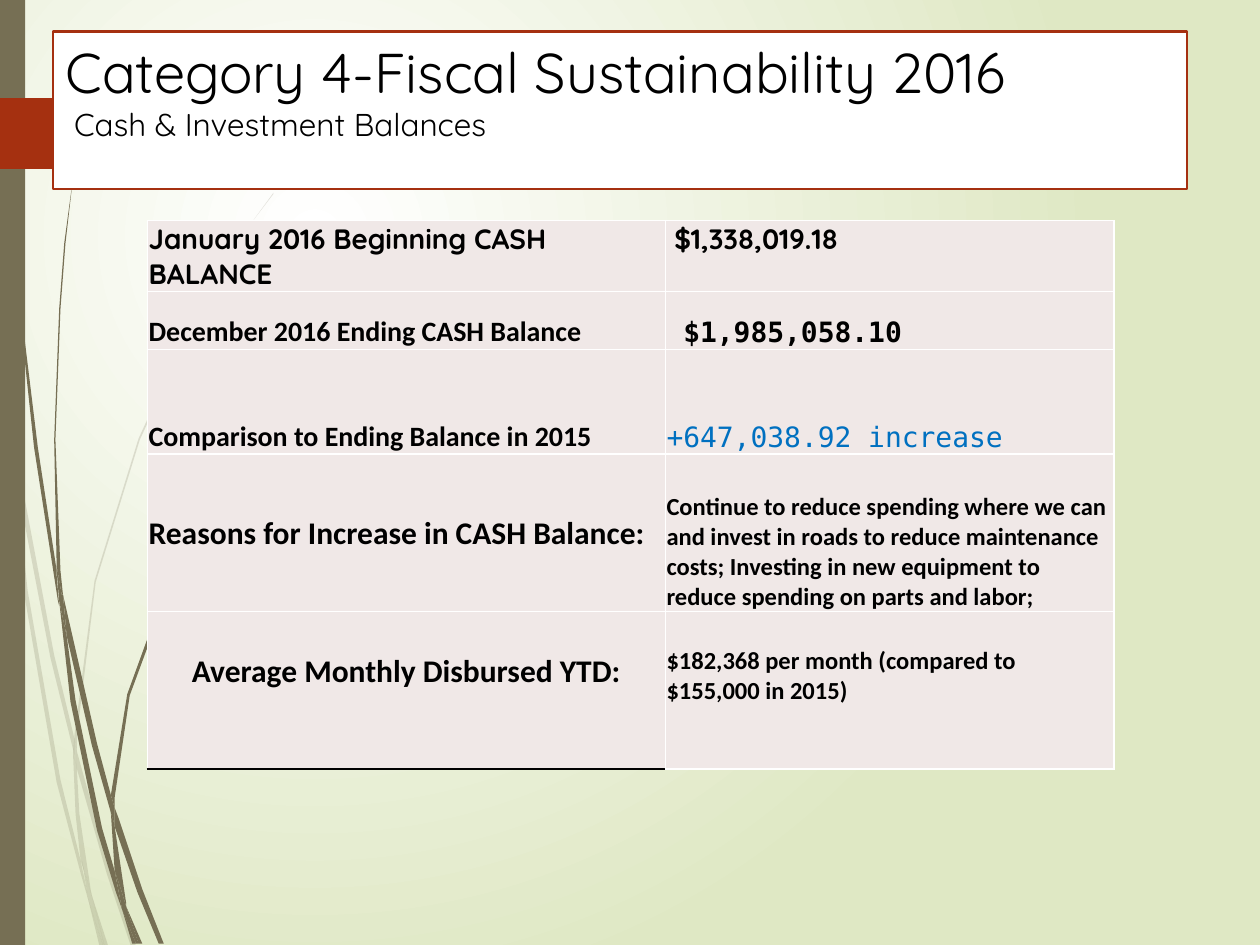
"""Build the fiscal sustainability slide with its cash balance table."""
import pptx
import pptx.dml.color
import pptx.enum.shapes
import pptx.enum.text
import pptx.oxml
import pptx.oxml.ns
import pptx.util

RGBColor = pptx.dml.color.RGBColor
SHAPE = pptx.enum.shapes.MSO_SHAPE
ANCHOR = pptx.enum.text.MSO_ANCHOR
ALIGN = pptx.enum.text.PP_ALIGN
EMU_PER_PX = 9144

OLIVE = RGBColor(0x76, 0x6F, 0x54)
RUST = RGBColor(0xA5, 0x30, 0x10)
WHITE = RGBColor(0xFF, 0xFF, 0xFF)
BLACK = RGBColor(0, 0, 0)
BLUE = RGBColor(0x00, 0x70, 0xC0)
SAGE = RGBColor(0xDF, 0xE8, 0xC4)
BLUSH = RGBColor(0xF0, 0xE8, 0xE7)

HEAD, BODY, MONO = "Quicksand", "Calibri", "DejaVu Sans Mono"

PALE_WISPS = [
    [(8, 350), (6, 322), (0, 282), (0, 299), (7, 344)],
    [(40, 522), (59, 599), (59, 586), (43, 520), (10, 345), (12, 376)],
    [(64, 607), (61, 596), (61, 610), (85, 694), (104, 751), (108, 751), (88, 692)],
    [(83, 751), (86, 751), (73, 711)],
    [(64, 683), (48, 619), (22, 469), (12, 376), (8, 350), (19, 470), (45, 621),
     (64, 693), (70, 714), (69, 707)],
    [(58, 599), (60, 646), (64, 683), (67, 692), (73, 711), (72, 706), (63, 646),
     (61, 610), (61, 608)],
    [(61, 584), (76, 462), (111, 349), (159, 245), (187, 198), (201, 175), (217, 154),
     (217, 153), (201, 175), (186, 197), (158, 244), (110, 348), (75, 461), (59, 584),
     (59, 586), (61, 596)],
    [(70, 714), (79, 751), (82, 751)],
    [(61, 608), (61, 610), (61, 596), (59, 586), (58, 599)],
    [(67, 692), (65, 683), (69, 707), (70, 714), (82, 751), (83, 751), (73, 711)],
]
DARK_WISPS = [
    [(5, 110), (14, 233), (27, 355), (46, 477), (47, 481), (45, 457), (45, 453),
     (30, 355), (15, 232), (6, 109), (4, 48), (3, 0), (2, 0), (3, 48)],
    [(73, 592), (88, 645), (88, 633), (88, 631), (77, 590), (50, 472), (53, 505)],
    [(94, 649), (91, 641), (91, 656), (109, 708), (126, 749), (130, 749), (113, 706)],
    [(91, 691), (81, 657), (60, 556), (53, 505), (47, 477), (56, 557), (77, 659),
     (92, 708), (97, 722), (96, 717)],
    [(50, 472), (48, 453), (44, 349), (48, 245), (52, 193), (58, 141), (51, 193),
     (47, 245), (43, 349), (45, 449), (49, 472)],
    [(110, 749), (113, 749), (100, 719)],
    [(47, 477), (53, 505), (50, 472), (49, 472), (45, 449), (45, 453)],
    [(91, 633), (103, 552), (131, 476), (169, 406), (191, 374), (203, 359), (216, 344),
     (215, 344), (203, 358), (191, 373), (168, 405), (129, 474), (101, 551), (88, 631),
     (91, 641)],
    [(97, 722), (105, 749), (108, 749)],
    [(88, 645), (91, 691), (96, 706), (100, 719), (100, 716), (91, 656), (90, 651)],
    [(88, 645), (90, 651), (91, 656), (91, 641), (88, 631), (88, 633)],
    [(96, 706), (91, 691), (96, 717), (97, 722), (108, 749), (110, 749), (100, 719)],
]

PLAIN = dict(font=BODY, size=16, color=BLACK, bold=True, anchor=ANCHOR.BOTTOM,
             align=ALIGN.LEFT, bottom=0, edge=WHITE)
ROWS = [
    (45, ("January 2016 Beginning CASH BALANCE", dict(font=HEAD)),
     (" $1,338,019.18", dict(font=HEAD, anchor=ANCHOR.TOP))),
    (46, ("December 2016 Ending CASH Balance", {}),
     (" $1,985,058.10", dict(font=MONO))),
    (83, ("Comparison to Ending Balance in 2015", {}),
     ("+647,038.92 increase", dict(font=MONO, color=BLUE, bold=False))),
    (125, ("Reasons for Increase in CASH Balance:", dict(size=18, anchor=ANCHOR.MIDDLE)),
     ("Continue to reduce spending where we can and invest in roads to reduce "
      "maintenance costs; Investing in new equipment to reduce spending on parts "
      "and labor;", dict(size=14))),
    (125, ("Average Monthly Disbursed YTD:",
           dict(size=18, anchor=ANCHOR.MIDDLE, align=ALIGN.CENTER, bottom=30, edge=BLACK)),
     ("$182,368 per month (compared to $155,000 in 2015)",
      dict(size=14, anchor=ANCHOR.MIDDLE, bottom=24))),
]


def px(*lengths):
    return [pptx.util.Emu(n * EMU_PER_PX) for n in lengths]


def xml(text):
    return pptx.oxml.parse_xml(text.replace(">", f" {pptx.oxml.ns.nsdecls('a')}>", 1))


class Deck:
    """Hold the presentation style and the current slide."""

    def __init__(self, width, height):
        self.prs = pptx.Presentation()
        self.prs.slide_width, self.prs.slide_height = px(width, height)
        self.s = self.prs.slides.add_slide(self.prs.slide_layouts[5])

    def background(self, inner, outer):
        fill = self.s.background.fill
        fill.gradient()
        for stop, color, position in zip(fill.gradient_stops, (inner, outer), (0, 1)):
            stop.color.rgb = color
            stop.position = position
        lin = self.s.element.find(".//" + pptx.oxml.ns.qn("a:lin"))
        lin.getparent().replace(lin, xml(
            '<a:path path="circle"><a:fillToRect l="50000" t="50000" '
            'r="100000" b="100000"/></a:path>'))

    def paint(self, sp, color, alpha=100):
        sp.shadow.inherit = False
        sp.fill.solid()
        sp.fill.fore_color.rgb = color
        sp.line.fill.background()
        if alpha < 100:
            clr = sp.element.spPr.find(".//" + pptx.oxml.ns.qn("a:srgbClr"))
            clr.append(xml(f'<a:alpha val="{alpha * 1000}"></a:alpha>'))

    def wisp(self, points, color, alpha=100):
        builder = self.s.shapes.build_freeform(*points[0], scale=EMU_PER_PX)
        builder.add_line_segments(points[1:])
        self.paint(builder.convert_to_shape(), color, alpha)

    def shape(self, kind, box, color):
        sp = self.s.shapes.add_shape(kind, *px(*box))
        self.paint(sp, color)
        return sp

    def title(self, box, heading, subheading):
        sp = self.s.shapes.title
        self.s.shapes.element.append(sp.element)
        sp.left, sp.top, sp.width, sp.height = px(*box)
        sp.fill.solid()
        sp.fill.fore_color.rgb = WHITE
        sp.line.color.rgb = RUST
        sp.line.width = pptx.util.Pt(1.25)
        tf = sp.text_frame
        tf.word_wrap = True
        tf.auto_size = pptx.enum.text.MSO_AUTO_SIZE.NONE
        tf.vertical_anchor = ANCHOR.TOP
        p = tf.paragraphs[0]
        p.alignment = ALIGN.LEFT
        p.font.name, p.font.color.rgb = HEAD, BLACK
        for text, size in ((heading, 32), (subheading, 18)):
            if p.runs:
                p.add_line_break()
            r = p.add_run()
            r.text, r.font.size = text, pptx.util.Pt(size)

    def cell(self, cell, text, style):
        cell.text = text
        cell.vertical_anchor = style["anchor"]
        cell.margin_left, cell.margin_top, cell.margin_right, cell.margin_bottom = px(
            1, 1, 1, style["bottom"])
        cell.fill.solid()
        cell.fill.fore_color.rgb = BLUSH
        p = cell.text_frame.paragraphs[0]
        p.alignment = style["align"]
        p.font.name, p.font.size = style["font"], pptx.util.Pt(style["size"])
        p.font.bold, p.font.color.rgb = style["bold"], style["color"]
        tcPr = cell._tc.get_or_add_tcPr()
        for i, side in enumerate("LRTB"):
            color = style["edge"] if side == "B" else WHITE
            tcPr.insert(i, xml(f'<a:ln{side} w="12700"><a:solidFill><a:srgbClr val="{color}"/>'
                               f'</a:solidFill></a:ln{side}>'))

    def table(self, left, top, widths, rows):
        heights = [row[0] for row in rows]
        box = px(left, top, sum(widths), sum(heights))
        tbl = self.s.shapes.add_table(len(rows), len(widths), *box).table
        tbl.first_row = tbl.horz_banding = False
        for column, width in zip(tbl.columns, px(*widths)):
            column.width = width
        for i, (height, *cells) in enumerate(rows):
            tbl.rows[i].height = px(height)[0]
            for j, (text, style) in enumerate(cells):
                self.cell(tbl.cell(i, j), text, PLAIN | style)


def main():
    deck = Deck(1000, 750)
    deck.background(WHITE, SAGE)
    for wisps, alpha in ((PALE_WISPS, 20), (DARK_WISPS, 100)):
        for points in wisps:
            deck.wisp(points, OLIVE, alpha)
    deck.shape(SHAPE.RECTANGLE, (0, 0, 20, 750), OLIVE)
    deck.shape(SHAPE.PENTAGON, (0, 78, 149, 56), RUST)
    deck.title((42, 25, 900, 125), "Category 4-Fiscal Sustainability 2016",
               " Cash & Investment Balances")
    deck.table(117, 175, (411, 356), ROWS)
    deck.prs.save("out.pptx")


if __name__ == "__main__":
    main()
